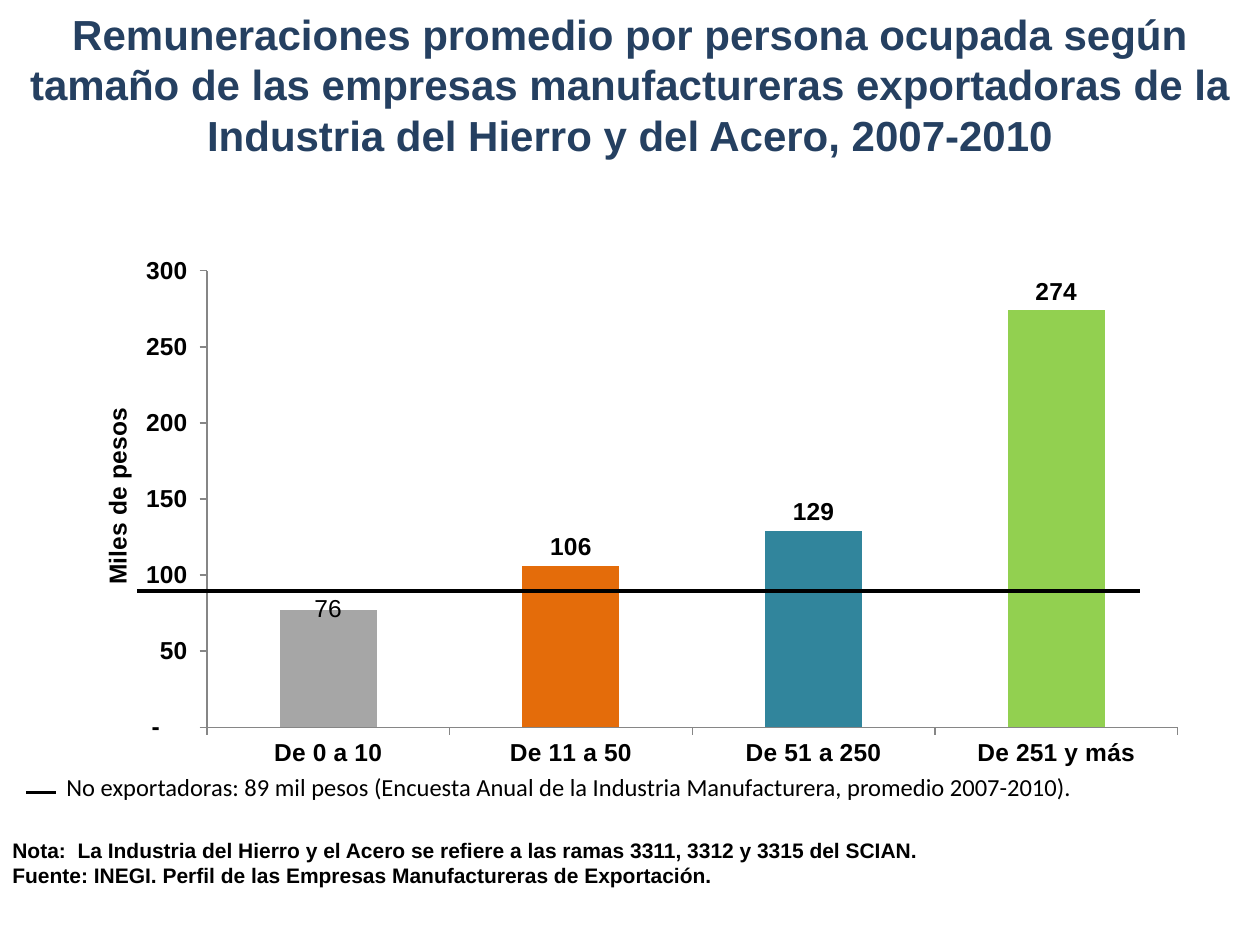
"""Build the slide on average pay by size of exporting steel firms."""
from pptx import Presentation
from pptx.chart.data import CategoryChartData
from pptx.dml.color import RGBColor
from pptx.enum.chart import XL_CHART_TYPE, XL_LABEL_POSITION, XL_TICK_MARK
from pptx.enum.shapes import MSO_CONNECTOR
from pptx.enum.text import MSO_ANCHOR, PP_ALIGN
from pptx.oxml import parse_xml
from pptx.oxml.ns import nsdecls, qn
from pptx.util import Cm, Pt

COLUMN = XL_CHART_TYPE.COLUMN_CLUSTERED
ABOVE = XL_LABEL_POSITION.OUTSIDE_END
OUTSIDE = XL_TICK_MARK.OUTSIDE
STRAIGHT = MSO_CONNECTOR.STRAIGHT
MIDDLE = MSO_ANCHOR.MIDDLE
CENTER = PP_ALIGN.CENTER

NAVY = RGBColor(0x25, 0x40, 0x61)
BLACK = RGBColor(0, 0, 0)
GRAY = RGBColor(0x86, 0x86, 0x86)
BARS = [
    RGBColor(0xA6, 0xA6, 0xA6),
    RGBColor(0xE4, 0x6C, 0x0A),
    RGBColor(0x31, 0x85, 0x9C),
    RGBColor(0x92, 0xD0, 0x50),
]
FORMAT = '_-* #,##0_-;\\-* #,##0_-;_-* "-"??_-;_-@_'


def style(font, size, bold, color=BLACK, name="Arial"):
    font.size, font.bold, font.name = Pt(size), bold, name
    font.color.rgb = color


def place(node, index, **parts):
    for old in node.findall(qn("c:layout")):
        node.remove(old)
    body = "".join(f'<c:{key} val="{val}"/>' for key, val in parts.items())
    node.insert(index, parse_xml(
        f'<c:layout {nsdecls("c")}><c:manualLayout>{body}'
        "</c:manualLayout></c:layout>"))


prs = Presentation()
prs.slide_width, prs.slide_height = Cm(25.4), Cm(19.05)
slide = prs.slides.add_slide(prs.slide_layouts[5])
shapes = slide.shapes

title = shapes.title
title.left, title.top, title.width, title.height = Cm(0), Cm(0), Cm(25.4), Cm(3.38)
frame = title.text_frame
frame.text = (
    "Remuneraciones promedio por persona ocupada según tamaño de las empresas "
    "manufactureras exportadoras de la Industria del Hierro y del Acero, 2007-2010"
)
frame.vertical_anchor = MIDDLE
frame.paragraphs[0].alignment = CENTER
style(frame.paragraphs[0].runs[0].font, 24, True, NAVY)

notes = [
    (1.09, 15.44, 23.19, 0.86, 14, False, "Calibri",
     "No exportadoras: 89 mil pesos (Encuesta Anual de la Industria "
     "Manufacturera, promedio 2007-2010)."),
    (0, 16.76, 24.69, 1.27, 12, True, "Arial",
     "Nota:  La Industria del Hierro y el Acero se refiere a las ramas 3311, "
     "3312 y 3315 del SCIAN.\n"
     "Fuente: INEGI. Perfil de las Empresas Manufactureras de Exportación."),
]
for left, top, width, height, size, bold, name, text in notes:
    frame = shapes.add_textbox(Cm(left), Cm(top), Cm(width), Cm(height)).text_frame
    frame.word_wrap = True
    frame.text = text
    for para in frame.paragraphs:
        style(para.runs[0].font, size, bold, BLACK, name)

data = CategoryChartData(number_format=FORMAT)
data.categories = ["De 0 a 10", "De 11 a 50", "De 51 a 250", "De 251 y más"]
data.add_series("Series 1", [77, 106, 129, 274])
chart = shapes.add_chart(
    COLUMN, Cm(1.27), Cm(4.45), Cm(22.86), Cm(11.63), data).chart
chart.has_legend = chart.has_title = False
style(chart.font, 14, True)

pay = chart.value_axis
pay.minimum_scale, pay.maximum_scale, pay.major_unit = 0, 300, 50
pay.has_major_gridlines = False
pay.tick_labels.number_format = FORMAT
pay.tick_labels.number_format_is_linked = False
for axis in (pay, chart.category_axis):
    axis.major_tick_mark = OUTSIDE
    axis.format.line.color.rgb = GRAY
    axis.format.line.width = Pt(0.75)
pay.axis_title.text_frame.text = "Miles de pesos"
style(pay.axis_title.text_frame.paragraphs[0].runs[0].font, 14, True)

plot = chart.plots[0]
plot.gap_width = 150
plot.vary_by_categories = False
bars = plot.series[0]
for index, color in enumerate(BARS):
    fill = bars.points[index].format.fill
    fill.solid()
    fill.fore_color.rgb = color
labels = bars.data_labels
labels.show_value = True
labels.number_format = FORMAT
labels.number_format_is_linked = False
labels.position = ABOVE
style(labels.font, 14, True)
first = bars.points[0].data_label
first.text_frame.text = "76"
first.position = ABOVE
style(first.text_frame.paragraphs[0].runs[0].font, 14, False)

root = chart.element
place(root.find(".//" + qn("c:plotArea")), 0, layoutTarget="inner",
      xMode="edge", yMode="edge", x=0.127, y=0.087, w=0.856, h=0.791)
place(root.find(".//" + qn("c:valAx")).find(qn("c:title")), 1,
      xMode="edge", yMode="edge", x=0.03, y=0.316)
place(root.find(".//" + qn("c:dLbl")), 1, x=0, y=0.03)

for start, end, level, width in ((0.53, 1.12, 15.98, 2), (2.77, 22.99, 11.91, 2.25)):
    line = shapes.add_connector(STRAIGHT, Cm(start), Cm(level), Cm(end), Cm(level))
    line.line.color.rgb = BLACK
    line.line.width = Pt(width)
    line.element.spPr.append(parse_xml(f'<a:effectLst {nsdecls("a")}/>'))

prs.save("out.pptx")
